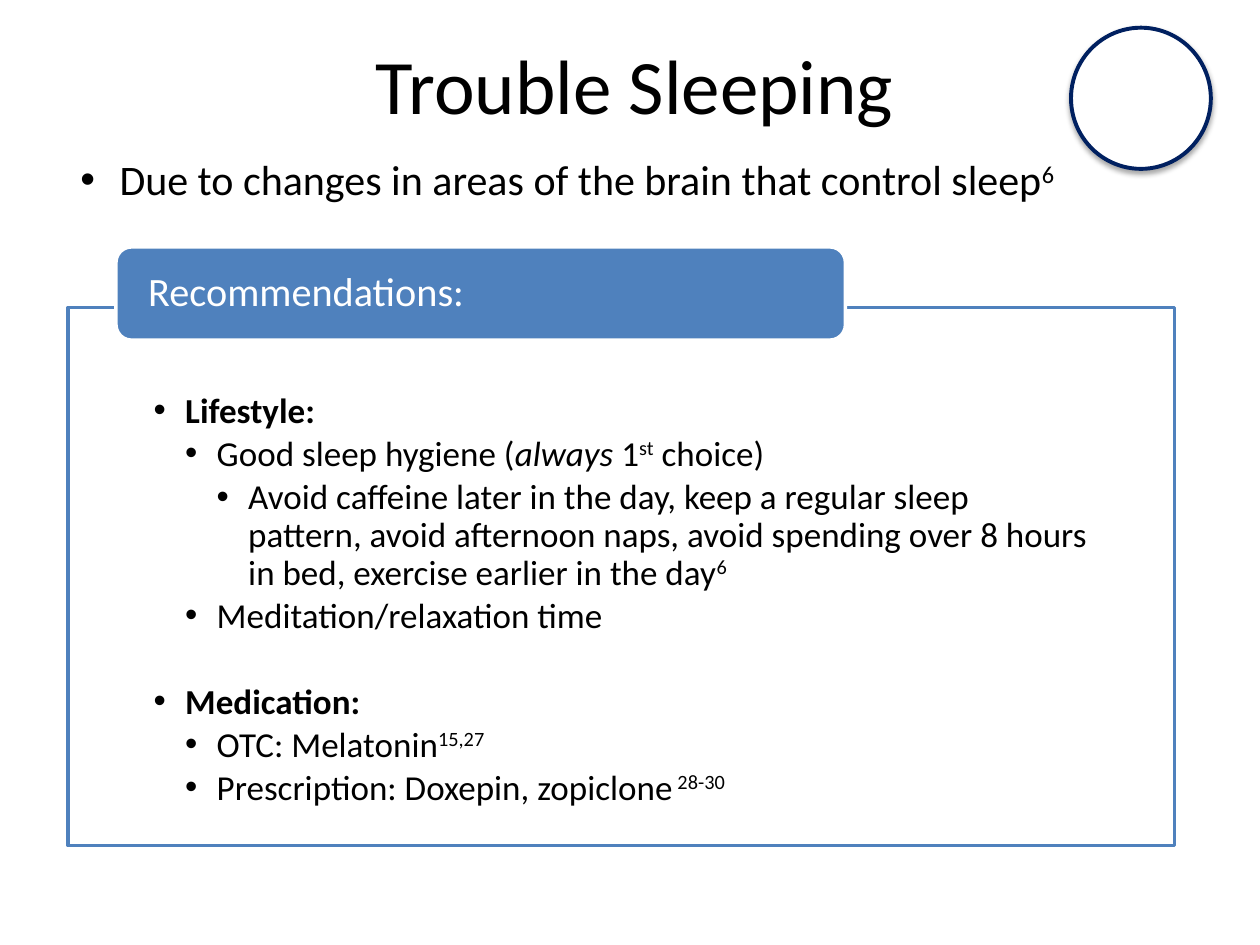
from dataclasses import dataclass

from lxml.etree import SubElement
from pptx import Presentation
from pptx.dml.color import RGBColor
from pptx.enum.shapes import MSO_SHAPE
from pptx.enum.text import MSO_ANCHOR, PP_ALIGN
from pptx.oxml.ns import qn
from pptx.util import Inches, Pt

FONT = "Calibri"
BLACK, WHITE, BLUE, NAVY = "000000", "FFFFFF", "4F81BD", "002060"


@dataclass
class Span:
    text: str
    bold: bool = False
    italic: bool = False
    superscript: bool = False


@dataclass
class Item:
    spans: list[Span]
    level: int = 0
    space_before: float = 0


def color(hex_value: str) -> RGBColor:
    return RGBColor.from_string(hex_value)


def add_shape(page, kind, left, top, width, height, *, fill, line, line_width):
    shape = page.shapes.add_shape(
        kind, Inches(left), Inches(top), Inches(width), Inches(height))
    shape.shadow.inherit = False
    shape.fill.solid()
    shape.fill.fore_color.rgb = color(fill)
    shape.line.color.rgb = color(line)
    shape.line.width = Pt(line_width)
    return shape


def add_soft_shadow(shape) -> None:
    effects = shape._element.spPr.find(qn("a:effectLst"))
    shadow = SubElement(effects, qn("a:outerShdw"), blurRad=str(Pt(3.1)),
                        dist=str(Pt(1.8)), dir="5400000", rotWithShape="0")
    black = SubElement(shadow, qn("a:srgbClr"), val=BLACK)
    SubElement(black, qn("a:alpha"), val="35000")


def add_bullet(para, level: int, indent: float) -> None:
    """Give the paragraph a hanging bullet, one indent deeper per level."""
    properties = para._p.get_or_add_pPr()
    properties.set("marL", str(Inches(indent * (level + 1))))
    properties.set("indent", str(Inches(-indent)))
    SubElement(properties, qn("a:buFont"), typeface="Arial")
    SubElement(properties, qn("a:buChar"), char="•")


def write_text(box, items: list[Item], *, size, font_color=BLACK,
               align=PP_ALIGN.LEFT, anchor=MSO_ANCHOR.TOP,
               insets=(0.1, 0.05, 0.1, 0.05), indent=0.0,
               line_spacing=1.0, space_after=0) -> None:
    """Fill the box; a positive indent makes the items bulleted."""
    frame = box.text_frame
    frame.word_wrap = True
    frame.vertical_anchor = anchor
    (frame.margin_left, frame.margin_top,
     frame.margin_right, frame.margin_bottom) = map(Inches, insets)
    for index, item in enumerate(items):
        para = frame.add_paragraph() if index else frame.paragraphs[0]
        para.alignment = align
        para.level = item.level
        para.line_spacing = line_spacing
        para.space_before = Pt(item.space_before)
        para.space_after = Pt(space_after)
        if indent:
            add_bullet(para, item.level, indent)
        for span in item.spans:
            run = para.add_run()
            run.text = span.text
            run.font.name = FONT
            run.font.size = Pt(size)
            run.font.bold = span.bold
            run.font.italic = span.italic
            run.font.color.rgb = color(font_color)
            if span.superscript:
                run.font._element.set("baseline", "30000")


def add_text_box(page, left, top, width, height, items, **text_format) -> None:
    box = page.shapes.add_textbox(
        Inches(left), Inches(top), Inches(width), Inches(height))
    write_text(box, items, **text_format)


RECOMMENDATIONS = [
    Item([Span("Lifestyle:", bold=True)]),
    Item([Span("Good sleep hygiene ("), Span("always", italic=True), Span(" 1"),
          Span("st", superscript=True), Span(" choice)")], level=1),
    Item([Span("Avoid caffeine later in the day, keep a regular sleep pattern, "
               "avoid afternoon naps, avoid spending over 8 hours in bed, "
               "exercise earlier in the day"),
          Span("6", superscript=True)], level=2),
    Item([Span("Meditation/relaxation time")], level=1),
    Item([Span("Medication:", bold=True)], space_before=24.6),
    Item([Span("OTC: Melatonin"), Span("15,27", superscript=True)], level=1),
    Item([Span("Prescription: Doxepin, zopiclone"),
          Span(" 28-30", superscript=True)], level=1),
]


def main() -> None:
    deck = Presentation()
    deck.slide_width, deck.slide_height = Inches(10), Inches(7.5)
    page = deck.slides.add_slide(deck.slide_layouts[6])

    circle = add_shape(page, MSO_SHAPE.OVAL, 8.5, 0.22, 1.11, 1.12,
                       fill=WHITE, line=NAVY, line_width=2.25)
    add_soft_shadow(circle)

    add_text_box(page, 0.54, 0.04, 9, 1.25, [Item([Span("Trouble Sleeping")])],
                 size=44, align=PP_ALIGN.CENTER, anchor=MSO_ANCHOR.MIDDLE)

    panel = add_shape(page, MSO_SHAPE.RECTANGLE, 0.54, 2.44, 8.78, 4.27,
                      fill=WHITE, line=BLUE, line_width=2)
    write_text(panel, RECOMMENDATIONS, size=20, insets=(0.68, 0.68, 0.68, 0.16),
               indent=0.25, line_spacing=0.9, space_after=3)

    cause = Item([Span("Due to changes in areas of the brain that control sleep"),
                  Span("6", superscript=True)])
    add_text_box(page, 0.54, 1.17, 8.78, 0.81, [cause], size=24, indent=0.31)

    heading = add_shape(page, MSO_SHAPE.ROUNDED_RECTANGLE, 0.92, 1.96, 5.79, 0.74,
                        fill=BLUE, line=WHITE, line_width=2)
    write_text(heading, [Item([Span("Recommendations:")])], size=23,
               font_color=WHITE, anchor=MSO_ANCHOR.MIDDLE,
               insets=(0.22, 0, 0.22, 0), line_spacing=0.9)

    deck.save("out.pptx")


if __name__ == "__main__":
    main()
